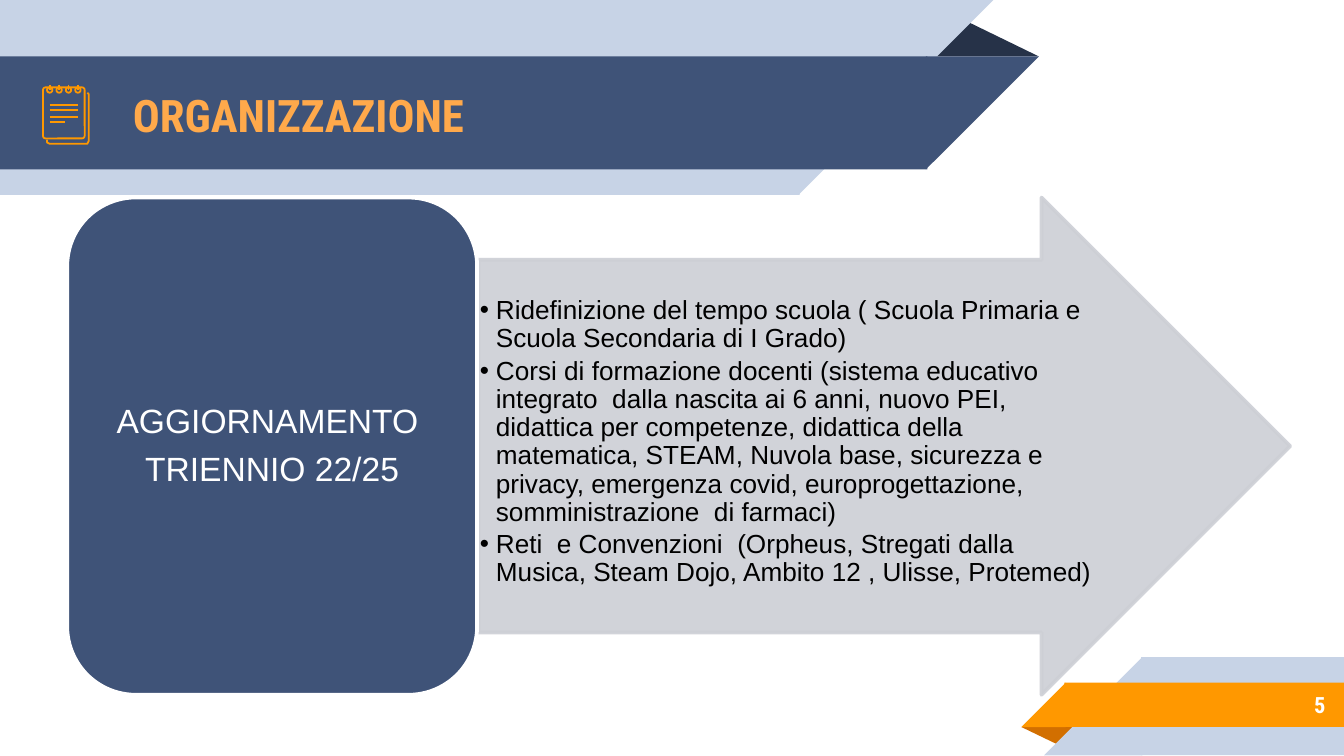
import pptx
import pptx.util
import pptx.dml.color
import pptx.enum.shapes
import pptx.enum.text
import pptx.oxml
import pptx.oxml.ns
import lxml.etree

Inches, Pt = pptx.util.Inches, pptx.util.Pt
KIND = pptx.enum.shapes.MSO_SHAPE
ALIGN = pptx.enum.text.PP_ALIGN
ANCHOR = pptx.enum.text.MSO_ANCHOR
qn = pptx.oxml.ns.qn

NAVY, PALE, ORANGE, GREY, WHITE = "3F5378", "C7D3E6", "FF9800", "CDCFD5", "FFFFFF"
CONDENSED = "Roboto Condensed"
LAP = 0.01  # overlap that hides the seam between ribbon parts
color = pptx.dml.color.RGBColor.from_string

# Widescreen page, 16 to 9
deck = pptx.Presentation()
deck.slide_width, deck.slide_height = Inches(10), Inches(10 * 9 / 16)
page = deck.slides.add_slide(deck.slide_layouts[6])


def add_block(kind, at, fill=None, line=None, width=0.96, turn=0, flip=False, adjust=()):
    shape = page.shapes.add_shape(kind, *[Inches(value) for value in at])
    shape.shadow.inherit = False
    shape.rotation = turn
    if flip:
        shape._element.spPr.find(qn("a:xfrm")).set("flipH", "1")
    for index, value in enumerate(adjust):
        shape.adjustments[index] = value
    if fill:
        shape.fill.solid()
        shape.fill.fore_color.rgb = color(fill)
    else:
        shape.fill.background()
    if line:
        shape.line.color.rgb = color(line)
        shape.line.width = Pt(width)
    else:
        shape.line.fill.background()
    return shape


def add_text(at, lines, size, font, ink, bold=False, align=ALIGN.LEFT,
             anchor=ANCHOR.MIDDLE, insets=(0.1, 0.1, 0.1, 0.1), spacing=None, before=0):
    box = page.shapes.add_textbox(*[Inches(value) for value in at])
    frame = box.text_frame
    frame.word_wrap = True
    frame.vertical_anchor = anchor
    (frame.margin_left, frame.margin_top,
     frame.margin_right, frame.margin_bottom) = [Inches(value) for value in insets]
    for index, line in enumerate(lines):
        para = frame.add_paragraph() if index else frame.paragraphs[0]
        para.alignment = align
        if spacing:
            para.line_spacing = spacing
        if index:
            para.space_before = Pt(before)
        span = para.add_run()
        span.text = line
        span.font.size, span.font.name, span.font.bold = Pt(size), font, bold
        span.font.color.rgb = color(ink)
    return frame


# Header ribbon: each band is a rectangle with a slanted end
add_block(KIND.ISOSCELES_TRIANGLE, (6.88, 0.14, 0.85, 0.28), "263248", adjust=[0.324])
for top, width, height, fill in [(0, 5.94, 1.45, PALE), (0.42, 6.89, 0.84, NAVY)]:
    add_block(KIND.RECTANGLE, (0, top, width + LAP, height), fill)
    add_block(KIND.RIGHT_TRIANGLE, (width, top, height, height), fill, turn=180, flip=True)

# Footer ribbon, slanted on the left
add_block(KIND.ISOSCELES_TRIANGLE, (7.6, 5.41, 0.43, 0.14), "D26F00", turn=180, adjust=[0.324])
for left, top, height, fill in [(8.5, 4.89, 0.73, PALE), (7.93, 5.08, 0.33, ORANGE)]:
    add_block(KIND.RECTANGLE, (left - LAP, top, 10 - left + LAP, height), fill)
    add_block(KIND.RIGHT_TRIANGLE, (left - height, top, height, height), fill, flip=True)

# Title and page number
add_text((0.89, 0.43, 5.75, 0.84), ["ORGANIZZAZIONE"], 24, CONDENSED, "FFA94B", bold=True)
add_text((8.33, 5.07, 1.63, 0.35), ["5"], 12, CONDENSED, WHITE, bold=True, align=ALIGN.RIGHT)

# Notepad icon: back sheet, front sheet, rings, then strokes
corners = [(0.35, 1.04), (0.35, 1.06), (0.37, 1.07), (0.65, 1.07),
           (0.66, 1.05), (0.66, 0.7), (0.65, 0.69)]
points = [(Inches(x), Inches(y)) for x, y in corners]
builder = page.shapes.build_freeform(*points[0])
builder.add_line_segments(points[1:], close=False)
sheet = builder.convert_to_shape()
sheet.shadow.inherit = False
sheet.fill.background()
sheet.line.color.rgb = color(ORANGE)
sheet.line.width = Pt(0.96)

add_block(KIND.ROUNDED_RECTANGLE, (0.32, 0.65, 0.31, 0.38), line=ORANGE, adjust=[0.06])
ring_centers = [0.37 + 0.07 * index for index in range(4)]
for x in ring_centers:
    add_block(KIND.OVAL, (x - 0.02, 0.65, 0.04, 0.04), line=ORANGE)

strokes = [(x, 0.63, x, 0.67) for x in ring_centers]
strokes += [(0.37, y, right, y)
            for y, right in [(0.78, 0.58), (0.82, 0.58), (0.87, 0.58), (0.91, 0.48)]]
for ends in strokes:
    stroke = page.shapes.add_connector(pptx.enum.shapes.MSO_CONNECTOR.STRAIGHT,
                                       *[Inches(value) for value in ends])
    stroke.line.color.rgb = color(ORANGE)
    stroke.line.width = Pt(0.96)
    lxml.etree.SubElement(stroke._element.spPr, qn("a:effectLst"))

# Arrow, slightly transparent in fill and line
arrow = add_block(KIND.RIGHT_ARROW, (3.56, 1.47, 6.04, 3.7), GREY, GREY, 2, adjust=[0.75, 0.5])
for tone in arrow._element.spPr.iter(qn("a:srgbClr")):
    lxml.etree.SubElement(tone, qn("a:alpha")).set("val", "90000")

# Bulleted actions
actions = [
    "Ridefinizione del tempo scuola ( Scuola Primaria e Scuola Secondaria di I Grado)",
    "Corsi di formazione docenti (sistema educativo integrato  dalla nascita ai 6 anni, "
    "nuovo PEI, didattica per competenze, didattica della matematica, STEAM, Nuvola base, "
    "sicurezza e privacy, emergenza covid, europrogettazione, somministrazione  di farmaci)",
    "Reti  e Convenzioni  (Orpheus, Stregati dalla Musica, Steam Dojo, Ambito 12 , "
    "Ulisse, Protemed)",
]
frame = add_text((3.56, 1.94, 4.65, 2.78), actions, 14, "Arial", "000000", anchor=ANCHOR.TOP,
                 insets=(0.01, 0.27, 0.01, 0.01), spacing=0.9, before=2.1)
for para in frame.paragraphs:
    settings = para._p.get_or_add_pPr()
    settings.set("marL", str(Inches(0.12)))
    settings.set("indent", str(Inches(-0.12)))
    lxml.etree.SubElement(settings, qn("a:buFont")).set("typeface", "Arial")
    lxml.etree.SubElement(settings, qn("a:buChar")).set("char", "•")

# Period card
add_block(KIND.ROUNDED_RECTANGLE, (0.5, 1.47, 3.05, 3.7), NAVY, WHITE, 2, adjust=[0.167])
add_text((0.65, 1.62, 2.75, 3.4), ["AGGIORNAMENTO ", "TRIENNIO 22/25"], 18, "Arial", WHITE,
         align=ALIGN.CENTER, insets=(0.07, 0.04, 0.07, 0.04), spacing=0.9, before=6.3)

deck.save("out.pptx")
